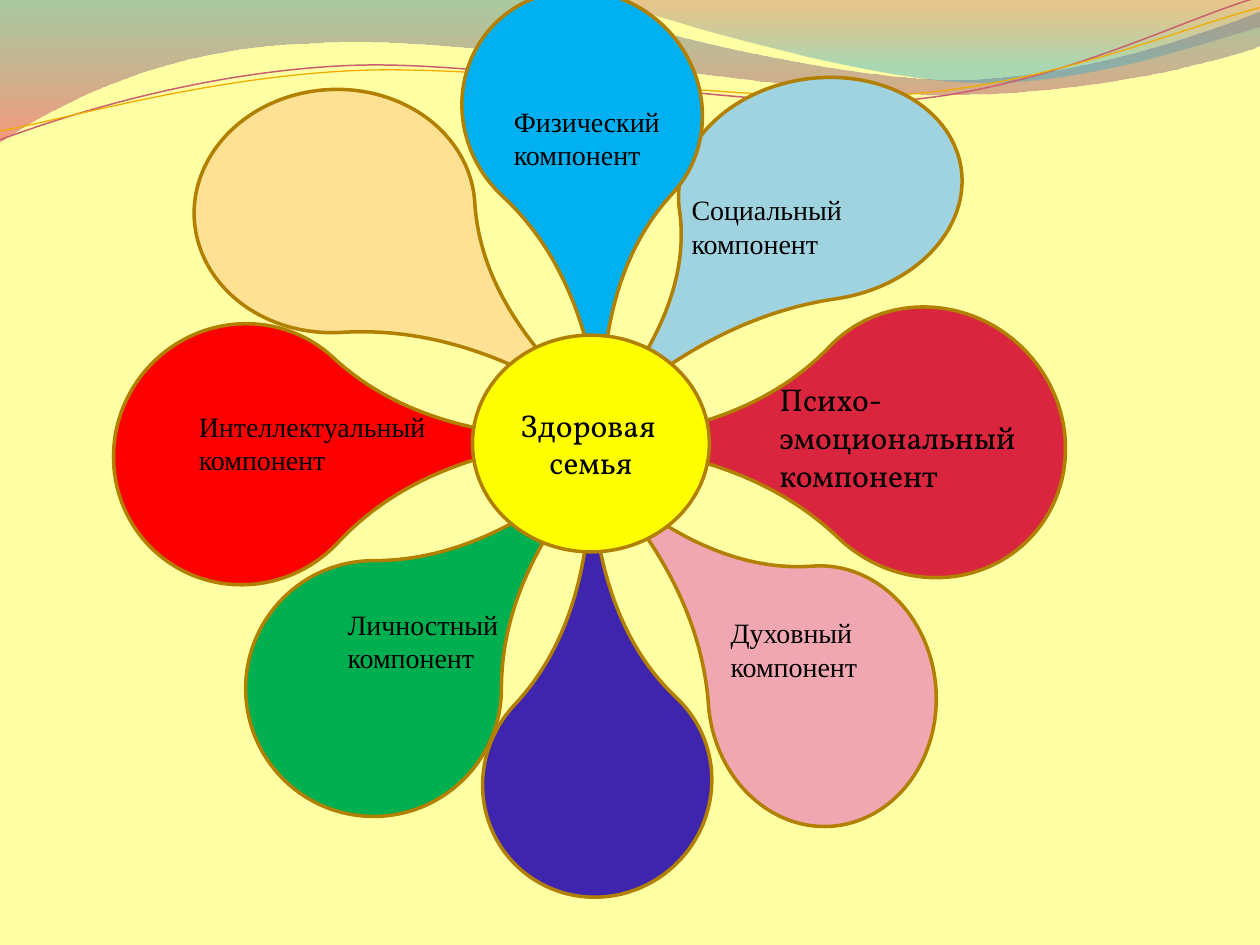
from math import cos, radians, sin

from lxml.etree import SubElement
from pptx import Presentation
from pptx.dml.color import RGBColor
from pptx.enum.shapes import MSO_SHAPE as SHAPE
from pptx.enum.text import MSO_ANCHOR as ANCHOR, PP_ALIGN as ALIGN
from pptx.oxml.ns import qn
from pptx.util import Inches, Pt

BACKGROUND, OUTLINE, INK = "FFFFA3", "B28000", "000000"
SERIF, DISPLAY = "Times New Roman", "Vollkorn"
STRAND_TILT = 2.7

BANDS = [
    ([[(0, 0)], [(4.4, -0.01)],
      [(4.76, 0.17), (6.64, 0.63), (7.58, 0.63)],
      [(8.53, 0.63), (9.58, 0.26), (10, 0.09)],
      [(10.01, 0.36)],
      [(9.83, 0.44), (8.7, 0.76), (7.46, 0.75)],
      [(6.22, 0.75), (3.82, 0.28), (2.57, 0.34)],
      [(1.29, 0.36), (0.46, 0.83), (-0.01, 1.13)],
      [(0, 0)]],
     [(0, "3F8A9F", 45), (1, "EF445B", 55)]),
    ([[(4.79, -0.01)],
      [(5.09, 0.11), (6.82, 0.62), (7.69, 0.65)],
      [(8.56, 0.69), (9.61, 0.32), (10, 0.21)],
      [(10, 0)], [(4.79, -0.01)]],
     [(0, "B84253", 30), (0.8, "42ABC7", 45)]),
]
STRANDS = [
    ([[(0, 1.11)],
      [(0.48, 0.93), (1.58, 0.57), (2.77, 0.52)],
      [(3.95, 0.47), (5.93, 0.89), (7.13, 0.8)],
      [(8.33, 0.71), (9.38, 0.15), (9.98, -0.02)]],
     (4.99, 0.58), "CB5F6E", 0.85),
    ([[(0, 1.04)],
      [(0.47, 0.96), (1.64, 0.61), (2.83, 0.56)],
      [(4.03, 0.51), (5.97, 0.84), (7.17, 0.75)],
      [(8.36, 0.67), (9.41, 0.21), (10, 0.06)]],
     (5, 0.59), "F0AD00", 0.75),
]
PETALS = [
    ((5.38, 0.62, 2.26, 1.76), 171.7, "A0D3E0"),
    ((5.49, 4.62, 2.07, 1.81), 265.8, "F0A7B1"),
    ((6.28, 2.46, 2.2, 2.1), 223.7, "D9253E"),
    ((0.91, 2.56, 2.05, 2.09), 42.9, "FF0000"),
    ((3.69, -0.1, 1.86, 1.95), 132.8, "00B0F0"),
    ((1.95, 4.45, 2.03, 2.03), 0, "00B050"),
    ((1.69, 0.56, 1.93, 2.23), 86.5, "FFE193"),
]
LABELS = [
    ((3.98, 0.78, 1.68, 0.64), ["Физический", "компонент"], SERIF, 16, True),
    ((1.48, 3.2, 2.08, 0.64), ["Интеллектуальный", "компонент"], SERIF, 16, True),
    ((2.66, 4.77, 1.42, 0.64), ["Личностный", "компонент"], SERIF, 16, False),
    ((5.7, 4.84, 1.24, 0.64), ["Духовный", "компонент"], SERIF, 16, False),
    ((5.39, 1.48, 1.47, 0.64), ["Социальный", "компонент"], SERIF, 16, False),
    ((6.09, 2.97, 2.27, 1.01), ["Психо-", "эмоциональный", "компонент"], DISPLAY, 18, True),
]
BOTTOM_PETAL = ((3.82, 5.31, 1.84, 1.8), 313.2, "3F25AD")
CENTER = (3.75, 2.66, 1.88, 1.72)
CENTER_LINES = ["Здоровая ", "семья"]


def rgb(color):
    return RGBColor.from_string(color)


def turn(point, pivot, angle):
    dx, dy = point[0] - pivot[0], point[1] - pivot[1]
    c, n = cos(radians(angle)), sin(radians(angle))
    return pivot[0] + dx * c - dy * n, pivot[1] + dx * n + dy * c


def add_wave(s, segments, close):
    segments = [[(Inches(x), Inches(y)) for x, y in seg] for seg in segments]
    ends = [seg[-1] for seg in segments]
    builder = s.shapes.build_freeform(*ends[0])
    builder.add_line_segments(ends[1:], close=close)
    sp = builder.convert_to_shape()
    sp.shadow.inherit = False
    for step, seg in zip(list(sp.element.iter(qn("a:lnTo"))), segments[1:]):
        if len(seg) == 3:
            step.tag = qn("a:cubicBezTo")
            step.remove(step[0])
            for x, y in seg:
                SubElement(step, qn("a:pt"), x=str(x - sp.left), y=str(y - sp.top))
    return sp


def add_band(s, segments, stops):
    sp = add_wave(s, segments, True)
    sp.line.fill.background()
    sp.fill.gradient()
    sp.fill.gradient_angle = 270
    for stop, (position, color, _) in zip(sp.fill.gradient_stops, stops):
        stop.position = position
        stop.color.rgb = rgb(color)
    colors = sp.element.spPr.find(qn("a:gradFill")).iter(qn("a:srgbClr"))
    for clr, (_, _, opacity) in zip(colors, stops):
        SubElement(clr, qn("a:alpha"), val=str(opacity * 1000))


def add_strand(s, segments, pivot, color, width):
    level = [[turn(pt, pivot, STRAND_TILT) for pt in seg] for seg in segments]
    sp = add_wave(s, level, False)
    sp.rotation = 360 - STRAND_TILT
    sp.fill.background()
    sp.line.color.rgb = rgb(color)
    sp.line.width = Pt(width)


def add_part(s, kind, box, color):
    sp = s.shapes.add_shape(kind, *map(Inches, box))
    sp.shadow.inherit = False
    sp.fill.solid()
    sp.fill.fore_color.rgb = rgb(color)
    sp.line.color.rgb = rgb(OUTLINE)
    sp.line.width = Pt(2)
    return sp


def add_petal(s, box, angle, color):
    sp = add_part(s, SHAPE.TEAR, box, color)
    sp.adjustments[0] = 2
    sp.rotation = angle


def write(tf, lines, font, size, align):
    for i, line in enumerate(lines):
        p = tf.add_paragraph() if i else tf.paragraphs[0]
        p.text = line
        p.alignment = align
        p.font.name = font
        p.font.size = Pt(size)
        p.font.color.rgb = rgb(INK)


def main():
    prs = Presentation()
    prs.slide_width, prs.slide_height = Inches(10), Inches(7.5)
    s = prs.slides.add_slide(prs.slide_layouts[6])
    s.background.fill.solid()
    s.background.fill.fore_color.rgb = rgb(BACKGROUND)

    for band in BANDS:
        add_band(s, *band)
    for strand in STRANDS:
        add_strand(s, *strand)
    for petal in PETALS:
        add_petal(s, *petal)
    for box, lines, font, size, wrap in LABELS:
        tf = s.shapes.add_textbox(*map(Inches, box)).text_frame
        tf.word_wrap = wrap
        write(tf, lines, font, size, ALIGN.LEFT)

    add_petal(s, *BOTTOM_PETAL)
    center = add_part(s, SHAPE.FLOWCHART_CONNECTOR, CENTER, "FFFF00")
    center.text_frame.vertical_anchor = ANCHOR.MIDDLE
    write(center.text_frame, CENTER_LINES, DISPLAY, 18, ALIGN.CENTER)
    prs.save("out.pptx")


if __name__ == "__main__":
    main()
